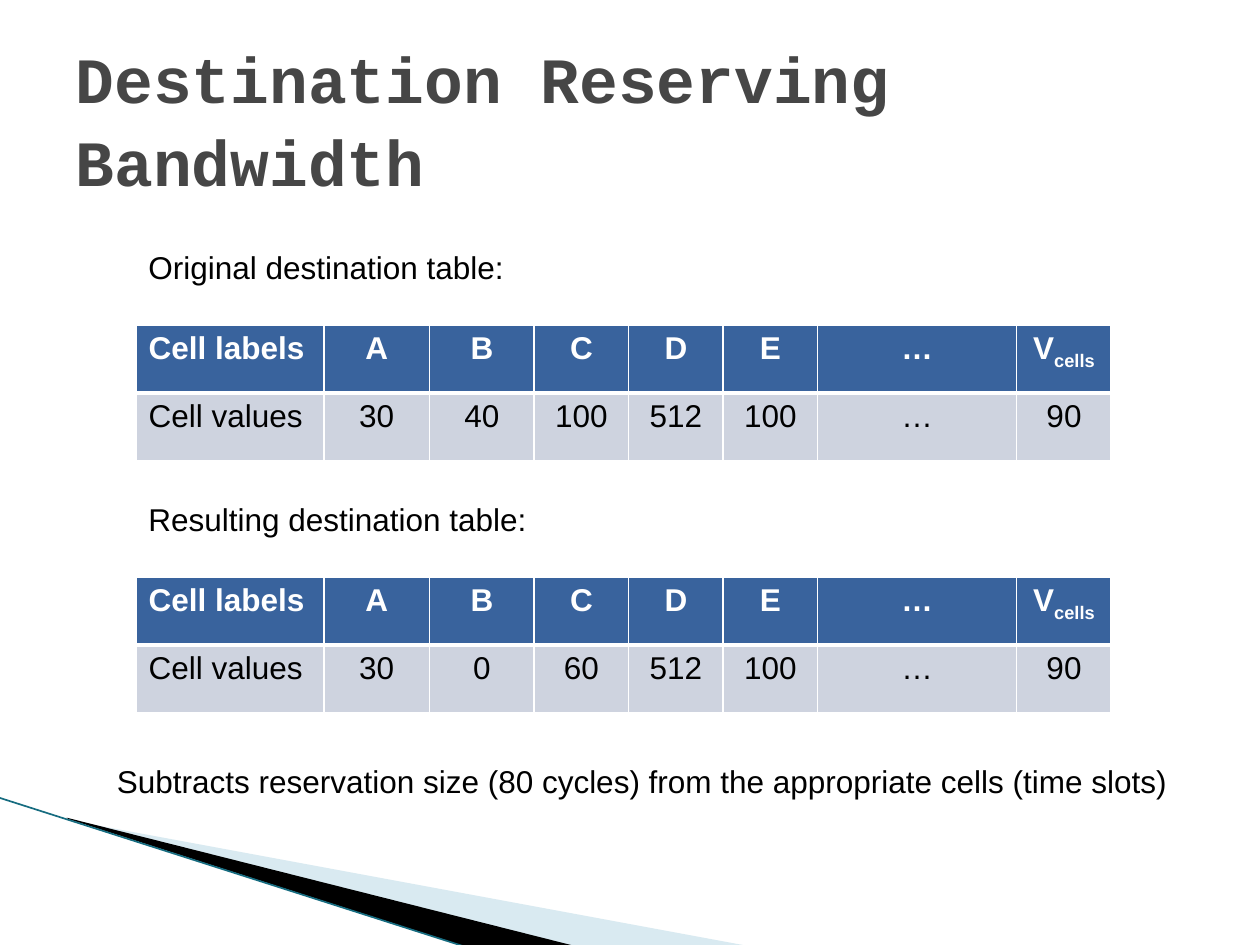
from lxml import etree
from pptx import Presentation
from pptx.dml.color import RGBColor
from pptx.enum.shapes import MSO_CONNECTOR
from pptx.enum.text import MSO_ANCHOR, MSO_AUTO_SIZE, PP_ALIGN
from pptx.oxml.ns import qn
from pptx.util import Inches, Pt

STRAIGHT = MSO_CONNECTOR.STRAIGHT
MIDDLE = MSO_ANCHOR.MIDDLE
NO_FIT, GROW = MSO_AUTO_SIZE.NONE, MSO_AUTO_SIZE.SHAPE_TO_FIT_TEXT
LEFT, CENTER = PP_ALIGN.LEFT, PP_ALIGN.CENTER

WHITE = RGBColor(0xFF, 0xFF, 0xFF)
BLACK = RGBColor(0, 0, 0)
GRAY = RGBColor(0x46, 0x46, 0x46)
PALE_BLUE = RGBColor(0xA0, 0xCB, 0xDC)
TEAL = RGBColor(0x16, 0x6C, 0x80)
HEADER_BLUE = RGBColor(0x39, 0x63, 0x9D)
BODY_GRAY = RGBColor(0xCE, 0xD3, 0xDF)


def write(paragraph, text, font="Arial", size=18, color=BLACK, bold=False,
          align=LEFT, baseline=None):
    paragraph.alignment = align
    run = paragraph.add_run()
    run.text = text
    run.font.name = font
    run.font.size = Pt(size)
    run.font.bold = bold
    run.font.color.rgb = color
    if baseline is not None:
        run.font._element.set("baseline", str(baseline * 1000))


def set_borders(cell, bottom):
    properties = cell._tc.get_or_add_tcPr()
    widths = {"a:lnL": 1, "a:lnR": 1, "a:lnT": 1, "a:lnB": bottom}
    for index, (tag, width) in enumerate(widths.items()):
        border = etree.Element(qn(tag), w=str(Pt(width)))
        solid = etree.SubElement(border, qn("a:solidFill"))
        etree.SubElement(solid, qn("a:srgbClr"), val=str(WHITE))
        properties.insert(index, border)


prs = Presentation()
prs.slide_width, prs.slide_height = Inches(10), Inches(7.5)
slide = prs.slides.add_slide(prs.slide_layouts[5])

# Corner decoration: two wedges and a thin line
wedges = [
    (PALE_BLUE, 40, [(0.55, 6.51), (5.95, 7.51), (4.56, 7.51), (0.55, 6.5)]),
    (BLACK, 100, [(0.53, 6.49), (4.57, 7.51), (3.72, 7.52), (0.54, 6.5)]),
]
for color, opacity, points in wedges:
    corners = [(Inches(x), Inches(y)) for x, y in points]
    outline = slide.shapes.build_freeform(*corners[0])
    outline.add_line_segments(corners[1:], close=True)
    wedge = outline.convert_to_shape()
    wedge.shadow.inherit = False
    wedge.fill.solid()
    wedge.fill.fore_color.rgb = color
    wedge.line.fill.background()
    if opacity < 100:
        solid_color = wedge._element.spPr.find(qn("a:solidFill"))[0]
        etree.SubElement(solid_color, qn("a:alpha"), val=str(opacity * 1000))

edge = slide.shapes.add_connector(
    STRAIGHT, Inches(-0.01), Inches(6.33), Inches(3.71), Inches(7.52))
edge.line.color.rgb = TEAL
edge.line.width = Pt(0.95)
etree.SubElement(edge._element.spPr, qn("a:effectLst"))

# Title
title = slide.shapes.title
title.left, title.top = Inches(0.5), Inches(0.3)
title.width, title.height = Inches(9), Inches(1.25)
title.text_frame.word_wrap = True
title.text_frame.auto_size = NO_FIT
title.text_frame.vertical_anchor = MIDDLE
heading = title.text_frame.paragraphs[0]
heading.line_spacing = 1.07
write(heading, "Destination Reserving Bandwidth", font="Courier New",
      size=36.9, color=GRAY, bold=True)

# Destination tables before and after the reservation
labels = ["Cell labels", "A", "B", "C", "D", "E", "…", "V"]
column_widths = [1.49, 0.84, 0.83, 0.75, 0.75, 0.75, 1.58, 0.75]
row_height = 0.54
destination_tables = [
    (2.58, ["Cell values", "30", "40", "100", "512", "100", "…", "90"]),
    (4.58, ["Cell values", "30", "0", "60", "512", "100", "…", "90"]),
]
for top, values in destination_tables:
    table = slide.shapes.add_table(
        2, len(labels), Inches(1.08), Inches(top),
        Inches(sum(column_widths)), Inches(2 * row_height)).table
    for column, width in zip(table.columns, column_widths):
        column.width = Inches(width)
    for r, row_texts in enumerate([labels, values]):
        is_header = r == 0
        table.rows[r].height = Inches(row_height)
        for c, text in enumerate(row_texts):
            cell = table.cell(r, c)
            cell.fill.solid()
            cell.fill.fore_color.rgb = HEADER_BLUE if is_header else BODY_GRAY
            set_borders(cell, bottom=3 if is_header else 1)
            style = {"color": WHITE if is_header else BLACK,
                     "bold": is_header, "align": CENTER if c else LEFT}
            paragraph = cell.text_frame.paragraphs[0]
            write(paragraph, text, **style)
            if text == "V":
                write(paragraph, "cells", baseline=-25, **style)
    # The header's thick rule is shared with the row below
    for c in range(len(labels)):
        shared = table.cell(1, c)._tc.tcPr.find(qn("a:lnT"))
        shared.set("w", str(Pt(3)))

# Captions and closing remark
captions = [
    (1.08, 1.92, 3.05, "Original destination table:"),
    (1.08, 3.92, 3.23, "Resulting destination table:"),
    (0.83, 6, 8.55, "Subtracts reservation size (80 cycles) from the "
                    "appropriate cells (time slots)"),
]
for left, top, width, text in captions:
    caption = slide.shapes.add_textbox(
        Inches(left), Inches(top), Inches(width), Inches(0.4))
    caption.text_frame.word_wrap = False
    caption.text_frame.auto_size = GROW
    write(caption.text_frame.paragraphs[0], text)

prs.save("out.pptx")
